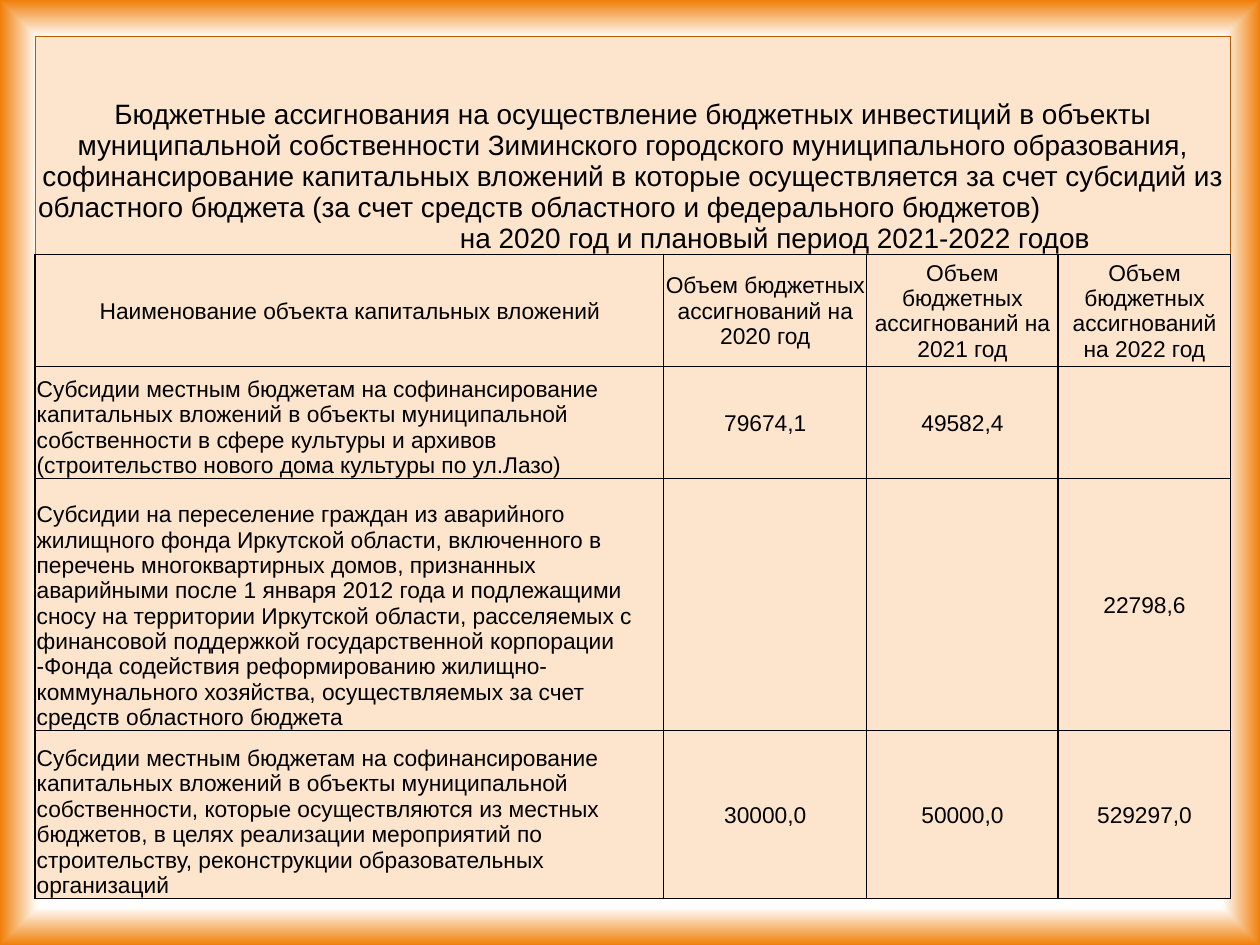
"""Build the slide on budget allocations for capital investments, 2020-2022."""
from lxml import etree
from pptx import Presentation
from pptx import util as u
from pptx.dml.color import RGBColor
from pptx.enum import text
from pptx.oxml import ns

THEME = {
    "font": "Arial", "title_size": 16, "body_size": 13,
    "text": "000000", "cell": "FDE5CD", "title_border": "B45E04", "grid": "000000",
    "background": [(0, "FFFFFF"), (92, "FFFFFF"), (100, "F07F09")],
}
LEFT, TOP = 0.71, 0.74
TITLE_HEIGHT = 4.39
COLUMN_WIDTHS = [12.67, 4.09, 3.86, 3.48]
ROW_HEIGHTS = [2.26, 2.26, 5.08, 3.38]
CENTER, LEFT_ALIGNED = text.PP_ALIGN.CENTER, text.PP_ALIGN.LEFT
MIDDLE, BOTTOM = text.MSO_ANCHOR.MIDDLE, text.MSO_ANCHOR.BOTTOM

TITLE = [
    ("Бюджетные ассигнования на осуществление бюджетных инвестиций в объекты "
     "муниципальной собственности Зиминского городского муниципального образования, "
     "софинансирование капитальных вложений в которые осуществляется за счет субсидий из",
     CENTER, 0),
    ("областного бюджета (за счет средств областного и федерального бюджетов)",
     LEFT_ALIGNED, 0.03),
    ("на 2020 год и плановый период 2021-2022 годов", CENTER, 5.72),
]
HEADER = ["Наименование объекта капитальных вложений"] + [
    f"Объем бюджетных ассигнований на {year} год" for year in (2020, 2021, 2022)]
ALLOCATIONS = [
    ("Субсидии местным бюджетам на софинансирование капитальных вложений в объекты "
     "муниципальной собственности в сфере культуры и архивов (строительство нового дома "
     "культуры по ул.Лазо)", "79674,1", "49582,4", ""),
    ("Субсидии на переселение граждан из аварийного жилищного фонда Иркутской области, "
     "включенного в перечень многоквартирных домов, признанных аварийными после 1 января "
     "2012 года и подлежащими сносу на территории Иркутской области, расселяемых с "
     "финансовой поддержкой государственной корпорации -Фонда содействия реформированию "
     "жилищно-коммунального хозяйства, осуществляемых за счет средств областного бюджета",
     "", "", "22798,6"),
    ("Субсидии местным бюджетам на софинансирование капитальных вложений в объекты "
     "муниципальной собственности, которые осуществляются из местных бюджетов, в целях "
     "реализации мероприятий по строительству, реконструкции образовательных организаций",
     "30000,0", "50000,0", "529297,0"),
]


def add_element(parent, tag, **attributes):
    element = etree.SubElement(parent, ns.qn(tag))
    for name, value in attributes.items():
        element.set(name, str(value))
    return element


def paint_background(slide):
    slide.background.fill.gradient()
    gradient = slide.element.xpath(".//a:gradFill")[0]
    for child in list(gradient):
        gradient.remove(child)
    stops = add_element(gradient, "a:gsLst")
    for position, color in THEME["background"]:
        stop = add_element(stops, "a:gs", pos=position * 1000)
        add_element(stop, "a:srgbClr", val=color)
    shade = add_element(gradient, "a:path", path="shape")
    add_element(shade, "a:fillToRect", l=50000, t=50000, r=50000, b=50000)


def write(paragraph, content, *, size, align, indent=0):
    paragraph.alignment = align
    if indent:
        paragraph._p.get_or_add_pPr().set("marL", str(u.Cm(indent)))
    run = paragraph.add_run()
    run.text = content
    run.font.size = u.Pt(size)
    run.font.name = THEME["font"]
    run.font.color.rgb = RGBColor.from_string(THEME["text"])


def format_cell(cell, *, anchor, border, width):
    cell.vertical_anchor = anchor
    cell.margin_left = cell.margin_right = cell.margin_top = u.Cm(0.03)
    cell.margin_bottom = 0
    properties = cell._tc.get_or_add_tcPr()
    for side in ("a:lnL", "a:lnR", "a:lnT", "a:lnB"):
        line = add_element(properties, side, w=u.Pt(width))
        add_element(add_element(line, "a:solidFill"), "a:srgbClr", val=border)
    cell.fill.solid()
    cell.fill.fore_color.rgb = RGBColor.from_string(THEME["cell"])


def add_grid(slide, top, widths, heights):
    frame = slide.shapes.add_table(len(heights), len(widths), u.Cm(LEFT), u.Cm(top),
                                   u.Cm(sum(widths)), u.Cm(sum(heights)))
    table = frame.table
    table.first_row = table.horz_banding = False
    for column, width in zip(table.columns, widths):
        column.width = u.Cm(width)
    for row, height in zip(table.rows, heights):
        row.height = u.Cm(height)
    return table


def add_title(slide):
    cell = add_grid(slide, TOP, [sum(COLUMN_WIDTHS)], [TITLE_HEIGHT]).cell(0, 0)
    format_cell(cell, anchor=BOTTOM, border=THEME["title_border"], width=0.75)
    frame = cell.text_frame
    for index, (content, align, indent) in enumerate(TITLE):
        paragraph = frame.add_paragraph() if index else frame.paragraphs[0]
        write(paragraph, content, size=THEME["title_size"], align=align, indent=indent)


def add_allocations(slide):
    table = add_grid(slide, TOP + TITLE_HEIGHT, COLUMN_WIDTHS, ROW_HEIGHTS)
    for row, values in enumerate([HEADER, *ALLOCATIONS]):
        for column, value in enumerate(values):
            is_name = row > 0 and column == 0
            cell = table.cell(row, column)
            format_cell(cell, anchor=BOTTOM if is_name else MIDDLE,
                        border=THEME["grid"], width=1)
            if value:
                write(cell.text_frame.paragraphs[0], value, size=THEME["body_size"],
                      align=LEFT_ALIGNED if is_name else CENTER)


def main():
    presentation = Presentation()
    presentation.slide_width, presentation.slide_height = u.Cm(25.4), u.Cm(19.05)
    slide = presentation.slides.add_slide(presentation.slide_layouts[6])
    paint_background(slide)
    add_title(slide)
    add_allocations(slide)
    presentation.save("out.pptx")


if __name__ == "__main__":
    main()
